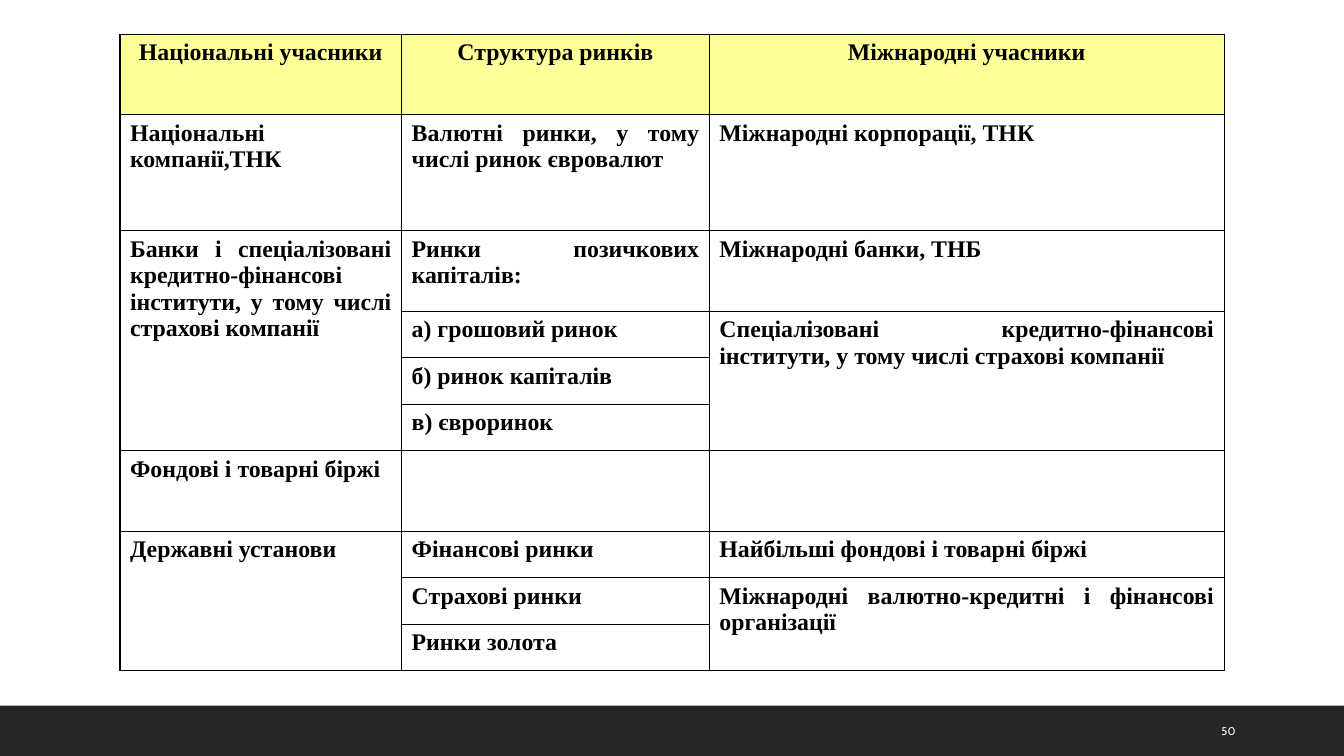
from lxml import etree
from pptx import Presentation
from pptx.dml.color import RGBColor
from pptx.enum.shapes import MSO_SHAPE
from pptx.enum.text import MSO_ANCHOR, PP_ALIGN
from pptx.oxml.ns import qn
from pptx.util import Pt

RECTANGLE = MSO_SHAPE.RECTANGLE
MIDDLE = MSO_ANCHOR.MIDDLE
LEFT, CENTER, JUSTIFY = PP_ALIGN.LEFT, PP_ALIGN.CENTER, PP_ALIGN.JUSTIFY
BLACK = RGBColor(0x00, 0x00, 0x00)
WHITE = RGBColor(0xFF, 0xFF, 0xFF)
CHARCOAL = RGBColor(0x26, 0x26, 0x26)
PALE_YELLOW = RGBColor(0xFF, 0xFF, 0x99)

COLUMN_WIDTHS = [201.2, 219.8, 367.8]
SHORT, TALL, TALLEST = 33.2, 57.5, 82.9
ROW_HEIGHTS = [TALL, TALLEST, TALL, SHORT, SHORT, SHORT, TALL, SHORT, SHORT, SHORT]
MARKET_ROWS = [
    ["Національні учасники", "Структура ринків", "Міжнародні учасники"],
    ["Національні компанії,ТНК", "Валютні ринки, у тому числі ринок євровалют",
     "Міжнародні корпорації, ТНК"],
    ["Банки і спеціалізовані кредитно-фінансові інститути, у тому числі страхові компанії",
     "Ринки позичкових капіталів:", "Міжнародні банки, ТНБ"],
    ["", "а) грошовий ринок",
     "Спеціалізовані кредитно-фінансові інститути, у тому числі страхові компанії"],
    ["", "б) ринок капіталів", ""],
    ["", "в) євроринок", ""],
    ["Фондові і товарні біржі", "", ""],
    ["Державні установи", "Фінансові ринки", "Найбільші фондові і товарні біржі"],
    ["", "Страхові ринки", "Міжнародні валютно-кредитні і фінансові організації"],
    ["", "Ринки золота", ""],
]
# (column, first row, last row)
MERGES = [(0, 2, 5), (2, 3, 5), (0, 7, 9), (2, 8, 9)]
# (row, column, side) of the finer rules
THIN_SIDES = {(2, 2, "B"), (3, 2, "T"), (7, 2, "B"), (8, 2, "T")}


def add_border(cell, side, width):
    line = etree.SubElement(cell._tc.get_or_add_tcPr(), qn(f"a:ln{side}"), w=str(Pt(width)))
    fill = etree.SubElement(line, qn("a:solidFill"))
    etree.SubElement(fill, qn("a:srgbClr"), val=str(BLACK))


presentation = Presentation()
presentation.slide_width = Pt(960)
presentation.slide_height = Pt(540)
slide = presentation.slides.add_slide(presentation.slide_layouts[6])

footer = slide.shapes.add_shape(RECTANGLE, Pt(0), Pt(504), Pt(960), Pt(36))
footer.shadow.inherit = False
footer.fill.solid()
footer.fill.fore_color.rgb = CHARCOAL
footer.line.fill.background()

page_number = slide.shapes.add_textbox(Pt(865.4), Pt(507.6), Pt(61.2), Pt(28.8)).text_frame
page_number.word_wrap = True
page_number.vertical_anchor = MIDDLE
number_line = page_number.paragraphs[0]
number_line.text = "50"
number_line.font.size = Pt(8)
number_line.font.name = "Cabin"
number_line.font.color.rgb = WHITE

markets = slide.shapes.add_table(
    len(ROW_HEIGHTS), len(COLUMN_WIDTHS), Pt(85.7), Pt(24.5),
    Pt(sum(COLUMN_WIDTHS)), Pt(sum(ROW_HEIGHTS))).table
for column, width in zip(markets.columns, COLUMN_WIDTHS):
    column.width = Pt(width)
for row, height in zip(markets.rows, ROW_HEIGHTS):
    row.height = Pt(height)

for r, texts in enumerate(MARKET_ROWS):
    for c, text in enumerate(texts):
        cell = markets.cell(r, c)
        for side in "LRTB":
            add_border(cell, side, 0.75 if (r, c, side) in THIN_SIDES else 1)
        if r == 0:
            cell.fill.solid()
            cell.fill.fore_color.rgb = PALE_YELLOW
        else:
            cell.fill.background()
        paragraph = cell.text_frame.paragraphs[0]
        paragraph.text = text
        if r == 0:
            paragraph.alignment = CENTER
        else:
            paragraph.alignment = LEFT if (r, c) == (1, 0) else JUSTIFY
        paragraph.font.size = Pt(17)
        paragraph.font.name = "Times New Roman"
        paragraph.font.bold = True
        paragraph.font.color.rgb = BLACK

for c, first, last in MERGES:
    markets.cell(first, c).merge(markets.cell(last, c))

presentation.save("out.pptx")
